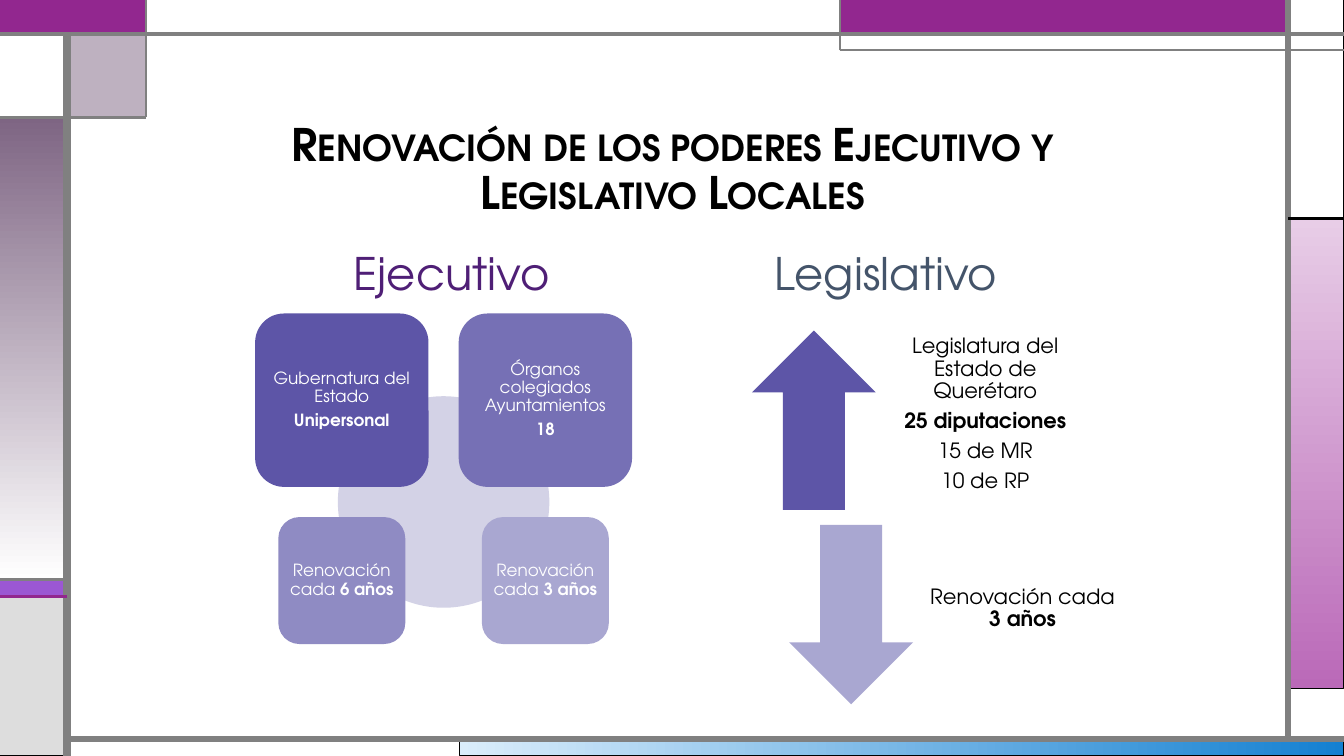
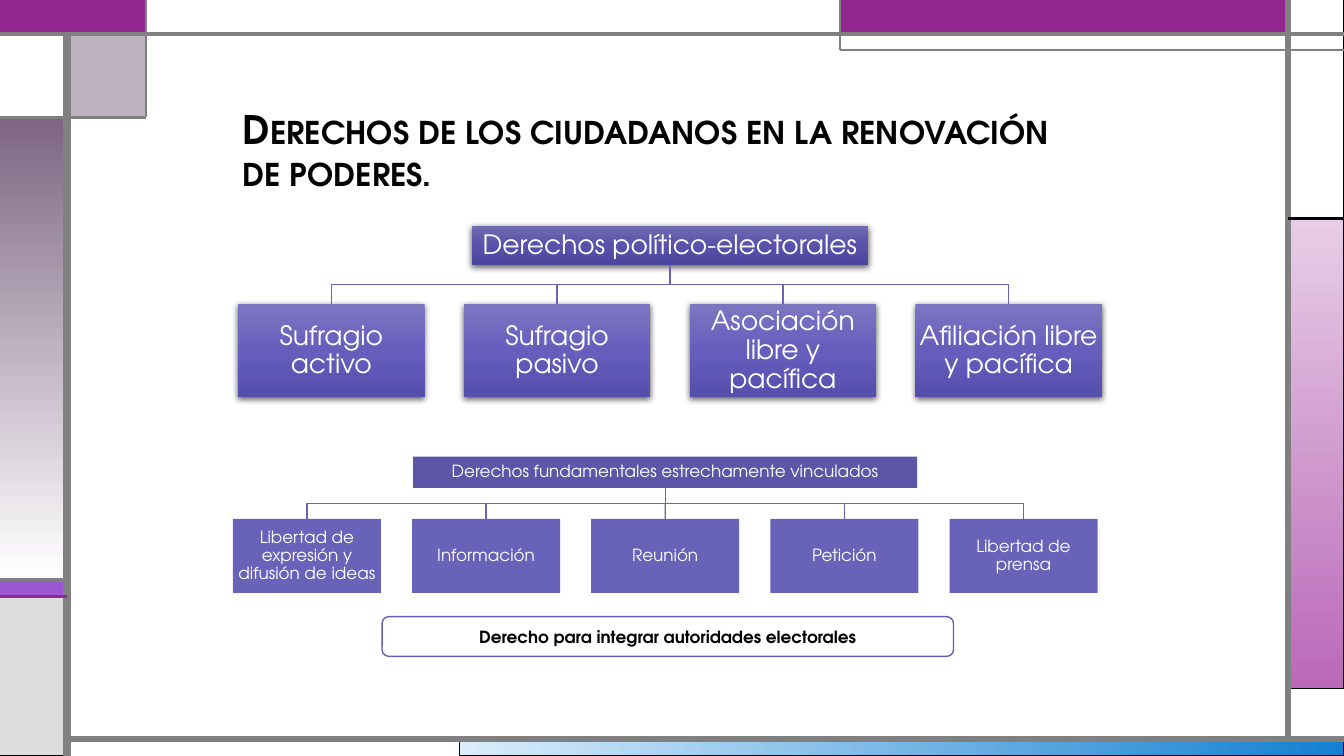
from pptx import Presentation
from pptx import util as u
from pptx.dml import color as dml
from pptx.enum import shapes as kinds, text as txt
from pptx.oxml import ns, parse_xml

FONT = "TeX Gyre Adventor"
WIDE, HIGH = 33.87, 19.05
BLACK, WHITE, GREY = "000000", "FFFFFF", "808080"
PLUM, MAUVE = "92278F", "7E6583"
DEEP, MID, SOFT, PALE = "5D55A7", "7670B5", "8F8BC3", "A9A7D1"
HALO, IRIS = "D3D2E6", "6962B9"
ROOT_FADE = ["716CB1", "5951AB", "4C459C"]
KID_FADE = ["7C76C1", "665DBD", "564EAD"]
FORM = kinds.MSO_SHAPE
ALIGN = txt.PP_ALIGN


def tint(item, value):
    item.rgb = dml.RGBColor.from_string(value)


def cms(*sizes):
    return [u.Cm(size) for size in sizes]


def fade(shape, stops, angle):
    step = 100000 / (len(stops) - 1)
    marks = "".join(
        f'<a:gs pos="{round(i * step)}"><a:srgbClr val="{stop}"/></a:gs>'
        for i, stop in enumerate(stops))
    shape.fill.background()
    props = shape.element.spPr
    props.replace(props.find(ns.qn("a:noFill")), parse_xml(
        f'<a:gradFill {ns.nsdecls("a")} rotWithShape="1"><a:gsLst>{marks}</a:gsLst>'
        f'<a:lin ang="{angle * 60000}" scaled="0"/></a:gradFill>'))


def shade(shape):
    effects = shape.element.spPr.find(ns.qn("a:effectLst"))
    effects.append(parse_xml(
        f'<a:outerShdw {ns.nsdecls("a")} blurRad="57150" dist="19050" dir="5400000" '
        'algn="ctr" rotWithShape="0"><a:srgbClr val="000000">'
        '<a:alpha val="63000"/></a:srgbClr></a:outerShdw>'))


def block(slide, box, fill, form=FORM.RECTANGLE, line=None, width=0.75, angle=90, alpha=None):
    shape = slide.shapes.add_shape(form, *cms(*box))
    shape.shadow.inherit = False
    if isinstance(fill, list):
        fade(shape, fill, angle)
    else:
        shape.fill.solid()
        tint(shape.fill.fore_color, fill)
    if alpha:
        hue = shape.element.spPr.find(ns.qn("a:solidFill"))[0]
        hue.append(parse_xml(f'<a:alpha {ns.nsdecls("a")} val="{alpha * 1000}"/>'))
    if line:
        tint(shape.line.color, line)
        shape.line.width = u.Pt(width)
    else:
        shape.line.fill.background()
    return shape


def rule(slide, ends, hue, width, start=None, end=None):
    link = slide.shapes.add_connector(kinds.MSO_CONNECTOR.STRAIGHT, *cms(*ends))
    if start:
        link.begin_connect(start, 2)
    if end:
        link.end_connect(end, 0)
    tint(link.line.color, hue)
    link.line.width = u.Pt(width)
    link.element.spPr.append(parse_xml(f'<a:effectLst {ns.nsdecls("a")}/>'))
    return link


def write(shape, lines, size=12, hue=WHITE, bold=False, align=ALIGN.CENTER,
          pitch=0.9, before=0, after=0.35, pads=(0.25, 0.13, 0.25, 0.13)):
    frame = shape.text_frame
    frame.word_wrap = True
    frame.auto_size = txt.MSO_AUTO_SIZE.NONE
    frame.vertical_anchor = txt.MSO_ANCHOR.MIDDLE
    (frame.margin_left, frame.margin_top,
     frame.margin_right, frame.margin_bottom) = cms(*pads)
    for i, line in enumerate(lines):
        para = frame.add_paragraph() if i else frame.paragraphs[0]
        para.alignment = align
        para.line_spacing = pitch
        para.space_before = u.Pt(before * size)
        para.space_after = u.Pt(after * size)
        for k, part in enumerate(line.split("*")):
            if part:
                run = para.add_run()
                run.text = part
                run.font.name = FONT
                run.font.size = u.Pt(size)
                run.font.bold = bold or k % 2 == 1
                tint(run.font.color, hue)
    return shape


def label(slide, box, lines, **style):
    return write(slide.shapes.add_textbox(*cms(*box)), lines, **style)


def title(slide, box, words, **style):
    head = slide.shapes.title
    head.left, head.top, head.width, head.height = cms(*box)
    write(head, [words], hue=BLACK, bold=True, after=0, **style)
    for props in head.element.iter(ns.qn("a:rPr")):
        props.set("cap", "small")


def border(slide, master):
    left, right, top, foot = 1.69, 32.46, 0.85, 18.63
    inner, band, notch = 3.67, 21.17, 2.96
    side, low, base = 5.5, 14.61, 15.03
    edge = WIDE - right
    parts = [
        block(slide, (11.58, foot, WIDE - 11.58, HIGH - foot), ["DAEDFB", "1480D1"],
              line=BLACK, angle=0),
        block(slide, (right, side, edge, 11.85), ["E8CDE7", "BA69B8"], line=BLACK),
        block(slide, (0, low, left, base - low), "9B57D3", line=BLACK),
        block(slide, (0, base, left, HIGH - base), "DDDDDD", line=BLACK),
        block(slide, (right, 0, edge, side), WHITE, line=BLACK),
        block(slide, (band, 0, right - band, top), PLUM, line="755DD9"),
        block(slide, (left, top, inner - left, notch - top), MAUVE, line=BLACK, alpha=50),
        block(slide, (0, notch, left, low - notch), [MAUVE, WHITE], line=BLACK),
        block(slide, (0, top, left, notch - top), WHITE, line=BLACK),
        block(slide, (0, 0, inner, top), PLUM, line=PLUM, width=1.5),
        block(slide, (inner, 0, band - inner, top), WHITE, line=GREY),
    ]
    lines = [
        ((left, HIGH, left, top), GREY, 6),
        ((left, foot, WIDE, foot), GREY, 4.5),
        ((right, foot, right, 0), GREY, 4.5),
        ((0, top, WIDE, top), GREY, 3),
        ((WIDE, 1.27, band, 1.27), GREY, 1.5),
        ((band, 1.27, band, 0), GREY, 1.5),
        ((right, side, WIDE, side), BLACK, 2.25),
        ((inner, 0, inner, notch), GREY, 1.5),
        ((inner, notch, 0, notch), GREY, 2.25),
        ((left, low, 0, low), GREY, 2.25),
        ((left, base, 0, base), PLUM, 2.25),
    ]
    parts += [rule(slide, *line) for line in lines]
    for i, part in enumerate(parts):
        part.element.xpath(".//p:cNvPr")[0].set("id", str(100 + i))
        master.shapes.element.append(part.element)


def cards(slide, box, rows):
    x, y, width = box
    big, small, gap, disc = 4.37, 3.2, 0.76, 5.33
    block(slide, (x + (width - disc) / 2, y + big + (gap - disc) / 2, disc, disc),
          HALO, form=FORM.FLOWCHART_CONNECTOR)
    for row, size, top in zip(rows, (big, small), (y, y + big + gap)):
        for (lines, fill), mid in zip(row, (x + big / 2, x + width - big / 2)):
            card = block(slide, (mid - size / 2, top, size, size), fill,
                         form=FORM.ROUNDED_RECTANGLE)
            write(card, lines, pads=(0.13,) * 4)


def arrows(slide, box, items):
    x, y = box
    width, height = 3.12, 4.52
    for i, (form, fill, lines) in enumerate(items):
        left, top = x + i * 0.94, y + i * 4.9
        block(slide, (left, top, width, height), fill, form=form)
        label(slide, (left + 3.23, top, 5.3, height), lines, size=15, hue=BLACK,
              pads=(0.3, 0, 0.3, 0.3))


def tree(slide, box, head, kids, size, fills, shadow=False):
    x, y, width, span = box
    ratio = 0.21
    count = len(kids)
    wide = width / (count + ratio * (count - 1))
    gap = ratio * wide
    mid, bus, top = x + width / 2, y + 1.5 * gap, y + 2 * gap

    def node(area, words, fill):
        shape = block(slide, area, fill)
        if shadow:
            shade(shape)
        return write(shape, [words], size=size, pads=(0.03,) * 4)

    root = node((mid - span / 2, y, span, gap), head, fills[0])
    rule(slide, (mid, y + gap, mid, bus), IRIS, 1, start=root)
    rule(slide, (x + wide / 2, bus, x + width - wide / 2, bus), IRIS, 1)
    for i, kid in enumerate(kids):
        left = x + i * (wide + gap)
        child = node((left, top, wide, wide / 2), kid, fills[1])
        rule(slide, (left + wide / 2, bus, left + wide / 2, top), IRIS, 1, end=child)


def powers(slide):
    title(slide, (6, 3.63, 21.9, 1.35),
          "Renovación de los poderes Ejecutivo y Legislativo Locales", size=32)
    for left, word, hue in ((6, "Ejecutivo", "4F1F76"), (16.94, "Legislativo", "44546A")):
        label(slide, (left, 5.72, 10.77, 2.29), [word], size=32, hue=hue,
              pitch=1, before=0.2, after=0)
    arrows(slide, (18.95, 8.33), [
        (FORM.UP_ARROW, DEEP, ["Legislatura del Estado de Querétaro",
                               "*25 diputaciones*", "15 de MR", "10 de RP"]),
        (FORM.DOWN_ARROW, PALE, ["Renovación cada *3 años*"]),
    ])
    cards(slide, (6.43, 7.9, 9.5), [
        [(["Gubernatura del Estado", "*Unipersonal*"], DEEP),
         (["Órganos colegiados Ayuntamientos", "*18*"], MID)],
        [(["Renovación cada *6 años*"], SOFT),
         (["Renovación cada *3 años*"], PALE)],
    ])


def rights(slide):
    title(slide, (5.87, 3.18, 21.9, 1.35),
          "Derechos de los ciudadanos en la renovación de poderes.",
          size=28, align=ALIGN.LEFT)
    tree(slide, (6, 5.69, 21.77, 10), "Derechos político-electorales",
         ["Sufragio activo", "Sufragio pasivo", "Asociación libre y pacífica",
          "Afiliación libre y pacífica"], 19, (ROOT_FADE, KID_FADE), shadow=True)
    tree(slide, (5.87, 11.51, 21.79, 12.7),
         "Derechos fundamentales estrechamente vinculados",
         ["Libertad de expresión y difusión de ideas", "Información", "Reunión",
          "Petición", "Libertad de prensa"], 12, (DEEP, IRIS))
    note = block(slide, (9.63, 15.54, 14.4, 1), WHITE, form=FORM.ROUNDED_RECTANGLE,
                 line="665EB8", width=1)
    write(note, ["Derecho para integrar autoridades electorales"], hue=BLACK,
          bold=True, pitch=1, after=0)


def main():
    deck = Presentation()
    deck.slide_width, deck.slide_height = cms(WIDE, HIGH)
    first, second = [deck.slides.add_slide(deck.slide_layouts[5]) for _ in range(2)]
    border(first, deck.slide_master)
    powers(first)
    rights(second)
    deck.save("out.pptx")


if __name__ == "__main__":
    main()
